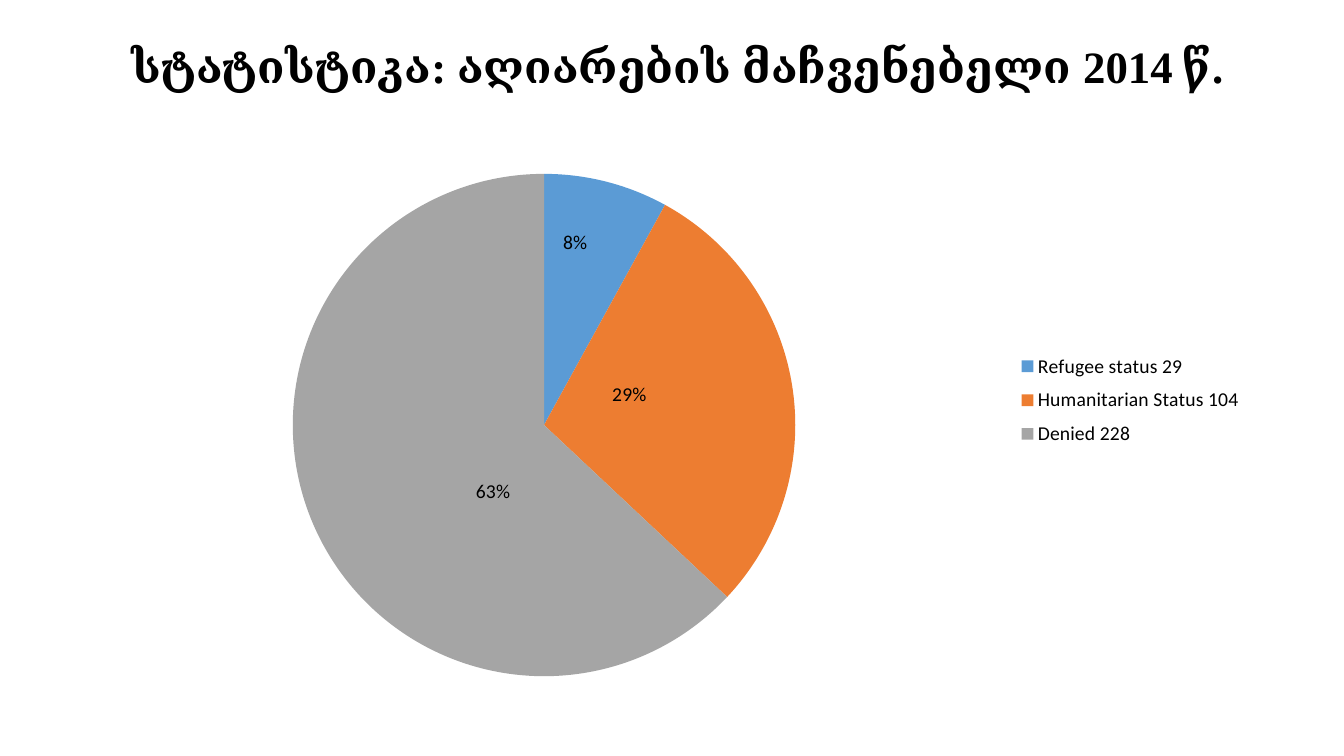
from lxml import etree
from pptx import Presentation
from pptx import util as u
from pptx.chart.data import CategoryChartData
from pptx.dml.color import RGBColor
from pptx.enum import chart as ch, text
from pptx.oxml.ns import qn

# Content
TITLE = "სტატისტიკა: აღიარების მაჩვენებელი 2014 წ. "
# category, percent, colour, label shift as a share of the chart size
SLICES = [
    ("Refugee status 29", 8, "5B9BD5", (0, -0.11)),
    ("Humanitarian Status 104", 29, "ED7D31", (-0.03, -0.02)),
    ("Denied 228", 63, "A5A5A5", (0.05, 0.03)),
]
# Shares of the chart size
PLOT_AREA = {"x": 0.21, "y": 0.07, "w": 0.39, "h": 0.91}
LEGEND_AREA = {"x": 0.76, "y": 0.38, "w": 0.2, "h": 0.2}


def color(hex_string):
    return RGBColor.from_string(hex_string)


def place(box, left, top, width, height):
    box.left, box.top = u.Inches(left), u.Inches(top)
    box.width, box.height = u.Inches(width), u.Inches(height)


def manual_layout(settings):
    layout = etree.Element(qn("c:layout"))
    manual = etree.SubElement(layout, qn("c:manualLayout"))
    for name, value in settings.items():
        etree.SubElement(manual, qn(f"c:{name}")).set("val", str(value))
    return layout


def set_layout(element, index, settings):
    for old_layout in element.findall(qn("c:layout")):
        element.remove(old_layout)
    element.insert(index, manual_layout(settings))


presentation = Presentation()
presentation.slide_width = u.Inches(13.33)
presentation.slide_height = u.Inches(7.5)
slide = presentation.slides.add_slide(presentation.slide_layouts[5])

# Title
title = slide.shapes.title
place(title, 0.44, 0.33, 12.67, 1.08)
frame = title.text_frame
frame.word_wrap = True
frame.auto_size = text.MSO_AUTO_SIZE.NONE
frame.vertical_anchor = text.MSO_ANCHOR.TOP
paragraph = frame.paragraphs[0]
paragraph.alignment = text.PP_ALIGN.CENTER
run = paragraph.add_run()
run.text = TITLE
run.font.name, run.font.size, run.font.bold = "Times New Roman", u.Pt(32), True
run.font.color.rgb = color("000000")

# Pie chart
data = CategoryChartData()
data.categories = [name for name, *_ in SLICES]
data.add_series("Series 1", [percent for _, percent, *_ in SLICES])
chart = slide.shapes.add_chart(
    ch.XL_CHART_TYPE.PIE, u.Inches(0.22), u.Inches(1.33),
    u.Inches(12.78), u.Inches(5.5), data).chart
chart.has_title = False
chart.font.name, chart.font.size = "Calibri", u.Pt(14)
chart.font.color.rgb = color("000000")
chart.has_legend = True
chart.legend.position = ch.XL_LEGEND_POSITION.RIGHT
chart.legend.include_in_layout = False

# Plot and legend positions
edges = {"xMode": "edge", "yMode": "edge"}
set_layout(chart._chartSpace.chart.plotArea, 0,
           {"layoutTarget": "inner", **edges, **PLOT_AREA})
set_layout(chart.legend._element, 1, {**edges, **LEGEND_AREA})

# Percent labels
plot = chart.plots[0]
plot.vary_by_categories = True
series = plot.series[0]
labels = series.data_labels
labels.show_percentage, labels.show_value = True, False
labels.number_format, labels.number_format_is_linked = "0%", False
labels.position = ch.XL_LABEL_POSITION.CENTER

# Slice colours and label shifts
for index, (_, _, fill, (shift_x, shift_y)) in enumerate(SLICES):
    point = series.points[index]
    point.format.fill.solid()
    point.format.fill.fore_color.rgb = color(fill)
    point.data_label.position = ch.XL_LABEL_POSITION.CENTER
    label = labels._element.findall(qn("c:dLbl"))[index]
    label.find(qn("c:showVal")).set("val", "0")
    label.find(qn("c:showPercent")).set("val", "1")
    set_layout(label, 1, {"x": shift_x, "y": shift_y})

presentation.save("out.pptx")
